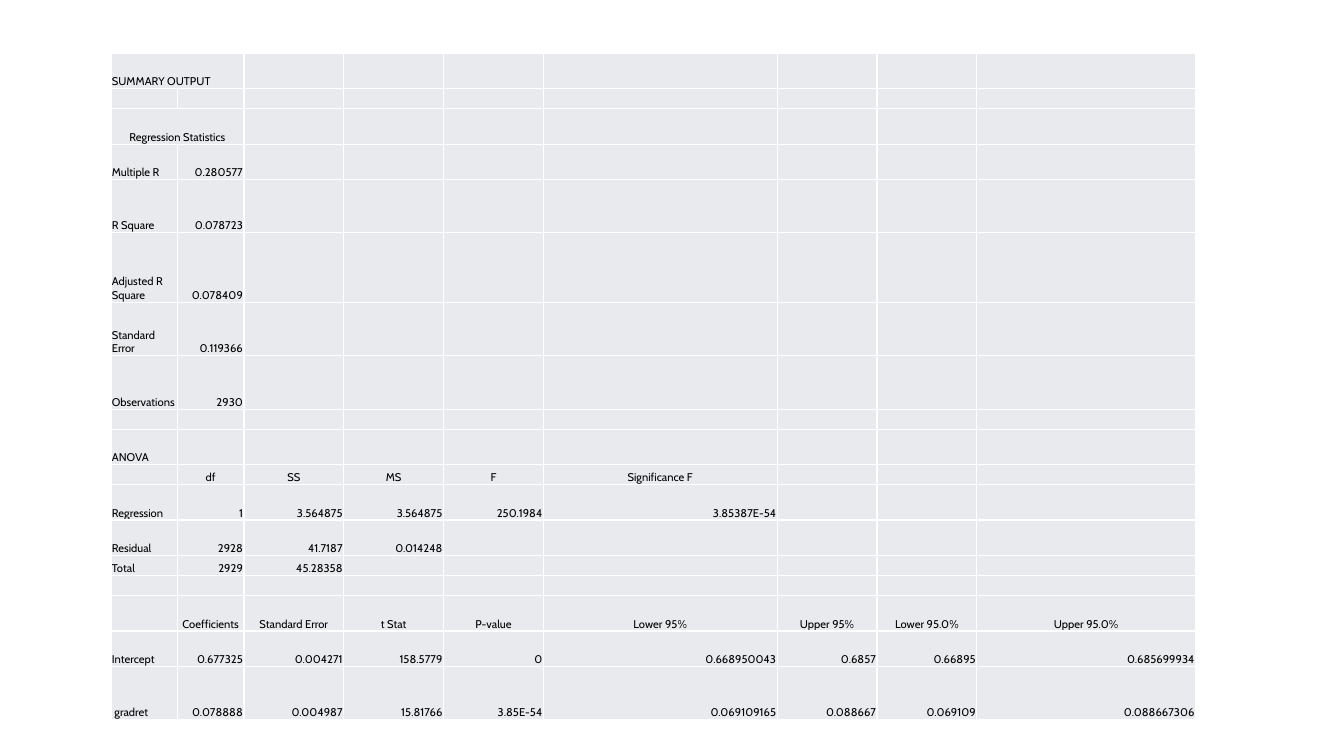
from dataclasses import dataclass

from lxml.etree import SubElement
from pptx import Presentation
from pptx.dml.color import RGBColor
from pptx.enum.text import MSO_ANCHOR, PP_ALIGN
from pptx.oxml.ns import qn
from pptx.util import Inches, Pt


@dataclass(frozen=True)
class Theme:
    """Colours, type and line sizes of the slide."""
    font: str = "Cabin"
    size: int = 8
    ink: str = "000000"
    fill: str = "E8EAED"
    rule: str = "FFFFFF"
    rule_width: int = 1
    inset: float = 0.01


THEME = Theme()
SLIDE_SIZE = (13.33, 7.5)
TABLE_ORIGIN = (1.1, 0.53)
COLUMN_WIDTHS = [0.66, 0.66, 0.99, 0.99, 0.99, 2.32, 0.99, 0.99, 2.17]
ROW_HEIGHTS = {"short": 0.2, "medium": 0.35, "tall": 0.53, "tallest": 0.69}

# Each row: height, role, texts from the first column on
REGRESSION_ROWS = [
    ("medium", "title", ["SUMMARY OUTPUT"]),
    ("short", "data", []),
    ("medium", "title heading", ["Regression Statistics"]),
    ("medium", "data", ["Multiple R", "0.280577"]),
    ("tall", "data", ["R Square", "0.078723"]),
    ("tallest", "data", ["Adjusted R Square", "0.078409"]),
    ("tall", "data", ["Standard Error", "0.119366"]),
    ("tall", "data", ["Observations", "2930"]),
    ("short", "data", []),
    ("medium", "data", ["ANOVA"]),
    ("short", "heading", ["", "df", "SS", "MS", "F", "Significance F"]),
    ("medium", "data", ["Regression", "1", "3.564875", "3.564875", "250.1984", "3.85387E-54"]),
    ("medium", "data", ["Residual", "2928", "41.7187", "0.014248"]),
    ("short", "data", ["Total", "2929", "45.28358"]),
    ("short", "data", []),
    ("medium", "heading", ["", "Coefficients", "Standard Error", "t Stat", "P-value",
                           "Lower 95%", "Upper 95%", "Lower 95.0%", "Upper 95.0%"]),
    ("medium", "data", ["Intercept", "0.677325", "0.004271", "158.5779", "0",
                        "0.668950043", "0.6857", "0.66895", "0.685699934"]),
    ("tall", "data", [" gradret", "0.078888", "0.004987", "15.81766", "3.85E-54",
                      "0.069109165", "0.088667", "0.069109", "0.088667306"]),
]


def draw_borders(cell):
    """Rule all four sides of a cell."""
    properties = cell._tc.get_or_add_tcPr()
    for side in ("lnL", "lnR", "lnT", "lnB"):
        line = SubElement(properties, qn(f"a:{side}"), w=str(Pt(THEME.rule_width)))
        solid = SubElement(line, qn("a:solidFill"))
        SubElement(solid, qn("a:srgbClr"), val=THEME.rule)


def style_cell(cell):
    """Give a cell its borders, fill, insets and anchor."""
    draw_borders(cell)
    cell.fill.solid()
    cell.fill.fore_color.rgb = RGBColor.from_string(THEME.fill)
    cell.margin_left = cell.margin_right = cell.margin_top = Inches(THEME.inset)
    cell.margin_bottom = 0
    cell.vertical_anchor = MSO_ANCHOR.BOTTOM


def write_cell(cell, text, alignment):
    """Write a cell's text; an empty cell keeps the small type size."""
    para = cell.text_frame.paragraphs[0]
    if not text:
        SubElement(para._p, qn("a:endParaRPr"), sz=str(THEME.size * 100))
        return
    para.text = text
    para.alignment = alignment
    for span in para.runs:
        span.font.name = THEME.font
        span.font.size = Pt(THEME.size)
        span.font.color.rgb = RGBColor.from_string(THEME.ink)


def alignment_of(role, column):
    """Centre headings, put labels left and numbers right."""
    if "heading" in role:
        return PP_ALIGN.CENTER
    return PP_ALIGN.RIGHT if column else PP_ALIGN.LEFT


def add_regression_table(page):
    """Add the table of regression results."""
    heights = [ROW_HEIGHTS[height] for height, _, _ in REGRESSION_ROWS]
    table = page.shapes.add_table(
        len(heights), len(COLUMN_WIDTHS), *map(Inches, TABLE_ORIGIN),
        Inches(sum(COLUMN_WIDTHS)), Inches(sum(heights))).table
    table.first_row = table.horz_banding = False
    for column, width in zip(table.columns, COLUMN_WIDTHS):
        column.width = Inches(width)
    for row, (_, role, texts) in enumerate(REGRESSION_ROWS):
        table.rows[row].height = Inches(heights[row])
        for column in range(len(COLUMN_WIDTHS)):
            cell = table.cell(row, column)
            style_cell(cell)
            text = texts[column] if column < len(texts) else ""
            write_cell(cell, text, alignment_of(role, column))
        if "title" in role:
            table.cell(row, 0).merge(table.cell(row, 1))


deck = Presentation()
deck.slide_width, deck.slide_height = map(Inches, SLIDE_SIZE)
add_regression_table(deck.slides.add_slide(deck.slide_layouts[6]))
deck.save("out.pptx")
